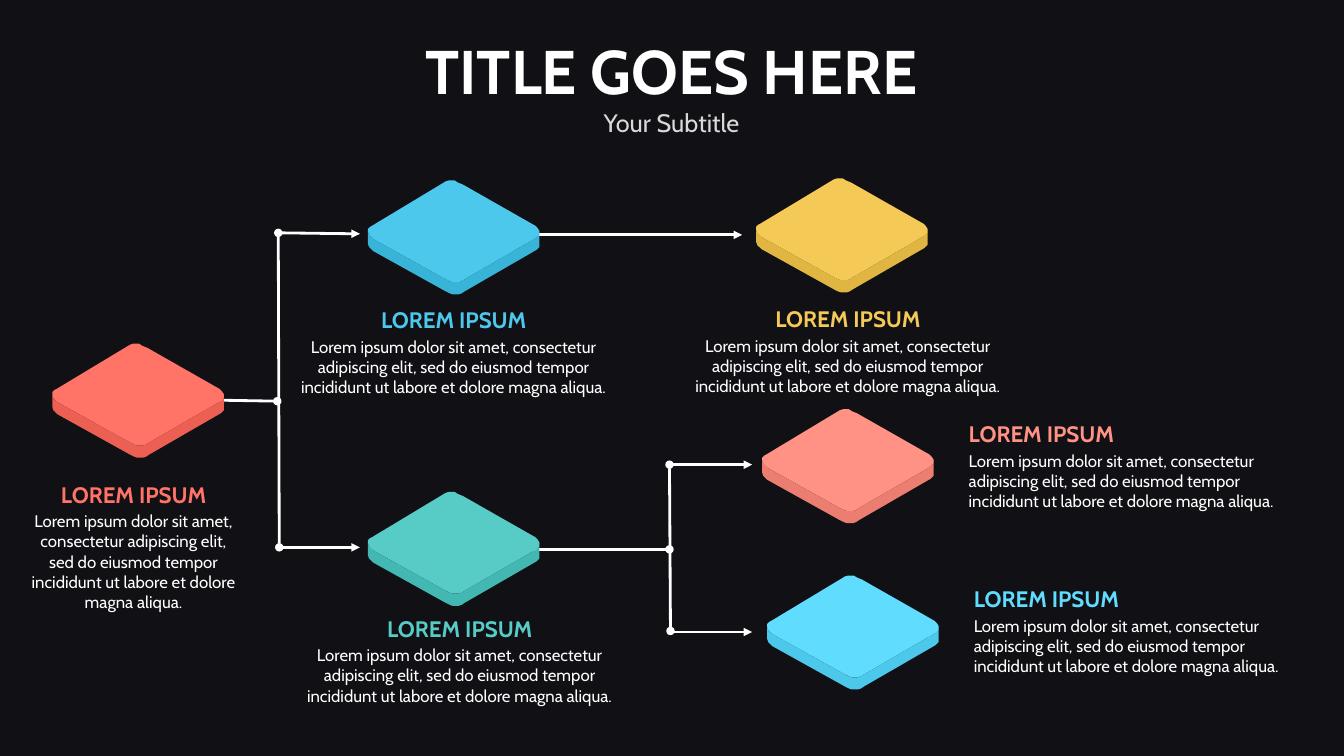
import pptx
import pptx.util
import pptx.dml.color
import pptx.enum.shapes
import pptx.enum.text
import pptx.oxml.ns
import lxml.etree
from dataclasses import dataclass

Inches, Pt = pptx.util.Inches, pptx.util.Pt
Align = pptx.enum.text.PP_ALIGN


@dataclass(frozen=True)
class Theme:
    back: str = "101015"
    white: str = "FFFFFF"
    grey: str = "D9D9D9"
    font: str = "Cabin"
    title: int = 44
    subtitle: int = 18
    head: int = 16
    body: int = 12
    line: int = 2


THEME = Theme()
TITLE, SUBTITLE = "TITLE GOES HERE", "Your Subtitle"
HEAD = "LOREM IPSUM"
BODY = ("Lorem ipsum dolor sit amet, consectetur adipiscing elit, sed do "
        "eiusmod tempor incididunt ut labore et dolore magna aliqua.")

# Tile left and top, top and side colours, then text box and alignment
NODES = [
    ((0.52, 3.41), "FF7467", "EB6053", (0.19, 4.72, 2.27, 1.42), Align.CENTER),
    ((3.65, 1.79), "4CC8EC", "38B4D8", (2.75, 2.99, 3.5, 1.02), Align.CENTER),
    ((3.65, 4.88), "57CCC6", "43B8B2", (2.81, 6.05, 3.5, 1.02), Align.CENTER),
    ((7.5, 1.77), "F4C956", "E0B542", (6.66, 2.98, 3.5, 1.02), Align.CENTER),
    ((7.56, 4.06), "FF9285", "EB7E71", (9.51, 4.12, 3.5, 1.02), Align.LEFT),
    ((7.61, 5.71), "60DCFF", "4CC8EB", (9.56, 5.76, 3.5, 1.02), Align.LEFT),
]

# Start, end, head at the start, head at the end
LINES = [
    ((5.26, 2.33), (7.36, 2.33), None, "triangle"),
    ((2.77, 2.31), (3.57, 2.32), None, "triangle"),
    ((2.77, 5.43), (2.76, 2.31), "oval", "oval"),
    ((2.77, 5.43), (3.57, 5.43), None, "triangle"),
    ((2.15, 3.97), (2.75, 3.98), None, "oval"),
    ((6.66, 4.61), (7.46, 4.61), None, "triangle"),
    ((6.65, 6.26), (6.64, 4.61), "oval", "oval"),
    ((6.66, 6.27), (7.46, 6.27), None, "triangle"),
    ((5.24, 5.45), (6.64, 5.45), None, "oval"),
]

# Tile outline in hundredths of an inch, clockwise
BACK = [(0, 51), (0.5, 48.5), (2, 46.5), (4, 45), (77, 1), (80, 0), (83, 0),
        (86, 0.5), (89, 1.5), (94, 4), (166, 45), (168.5, 47), (170, 49.5),
        (170, 51)]
FRONT = [(170, 51), (169.5, 53.5), (167, 57), (96, 98), (93, 100),
         (90, 101), (87, 101), (84, 101), (81, 100), (77, 98),
         (5, 58), (3, 56.5), (1, 54.5), (0, 51)]
DEPTH = 12


def rgb(code):
    return pptx.dml.color.RGBColor.from_string(code)


def outline(slide, spot, points, color):
    """Draw a closed, filled outline with its origin at spot."""
    pen = slide.shapes.build_freeform(*points[0], scale=Inches(0.01))
    pen.add_line_segments(points[1:], close=True)
    shape = pen.convert_to_shape(*map(Inches, spot))
    shape.shadow.inherit = False
    shape.fill.solid()
    shape.fill.fore_color.rgb = rgb(color)
    shape.line.fill.background()


def tile(slide, spot, top, side):
    low = [(x, y + DEPTH) for x, y in FRONT]
    outline(slide, spot, BACK + FRONT, top)
    outline(slide, spot, low + FRONT[::-1], side)


def write(slide, box, rows, align, gap=0):
    """Add a text box; each row is text, size, colour, bold."""
    frame = slide.shapes.add_textbox(*map(Inches, box)).text_frame
    frame.word_wrap = True
    for i, (text, size, color, bold) in enumerate(rows):
        para = frame.add_paragraph() if i else frame.paragraphs[0]
        para.text = text
        para.alignment = align
        if i:
            para.space_before = Pt(gap)
        font = para.font
        font.name, font.size, font.bold = THEME.font, Pt(size), bold
        font.color.rgb = rgb(color)


def link(slide, start, end, head, tail):
    wire = slide.shapes.add_connector(
        pptx.enum.shapes.MSO_CONNECTOR.STRAIGHT,
        *map(Inches, start + end))
    wire.line.color.rgb = rgb(THEME.white)
    wire.line.width = Pt(THEME.line)
    qn = pptx.oxml.ns.qn
    props = wire.line._get_or_add_ln()
    for tag, kind in (("a:headEnd", head), ("a:tailEnd", tail)):
        if kind:
            lxml.etree.SubElement(props, qn(tag), type=kind)
    lxml.etree.SubElement(wire._element.spPr, qn("a:effectLst"))


def main():
    deck = pptx.Presentation()
    deck.slide_width, deck.slide_height = Inches(13.33), Inches(7.5)
    slide = deck.slides.add_slide(deck.slide_layouts[6])
    slide.background.fill.solid()
    slide.background.fill.fore_color.rgb = rgb(THEME.back)

    write(slide, (3.65, 0.28, 6.02, 1.2),
          [(TITLE, THEME.title, THEME.white, True),
           (SUBTITLE, THEME.subtitle, THEME.grey, False)], Align.CENTER)
    for line in LINES:
        link(slide, *line)
    for spot, top, side, box, align in NODES:
        tile(slide, spot, top, side)
        write(slide, box,
              [(HEAD, THEME.head, top, True),
               (BODY, THEME.body, THEME.white, False)],
              align, gap=THEME.body * 0.2)
    deck.save("out.pptx")


if __name__ == "__main__":
    main()
